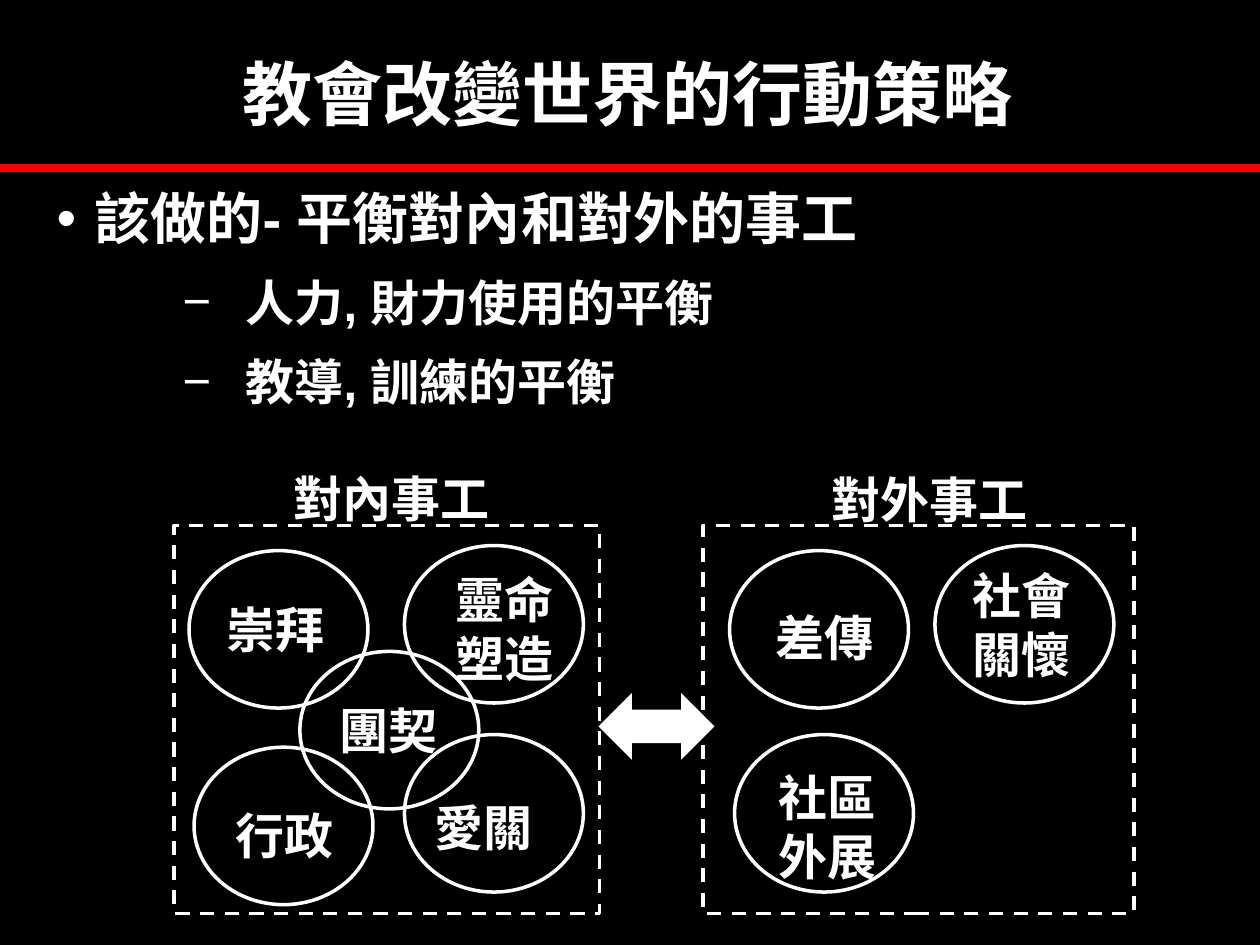
from dataclasses import dataclass

from lxml import etree
from pptx import Presentation
from pptx.dml.color import RGBColor
from pptx.enum import dml, shapes, text
from pptx.oxml import ns
from pptx.util import Inches, Pt


@dataclass(frozen=True)
class Theme:
    font: str = "Arial"
    back: RGBColor = RGBColor(0, 0, 0)
    ink: RGBColor = RGBColor(255, 255, 255)
    rule: RGBColor = RGBColor(255, 0, 0)
    title: int = 40
    lead: int = 32
    label: int = 28
    outline: float = 2
    rule_width: float = 4.5


class SlideBuilder:
    def __init__(self, slide, theme):
        self.slide = slide
        self.theme = theme
        slide.background.fill.solid()
        slide.background.fill.fore_color.rgb = theme.back

    def place(self, shape, area):
        shape.left, shape.top, shape.width, shape.height = map(Inches, area)

    def add_words(self, para, words, size, align=text.PP_ALIGN.LEFT):
        para.alignment = align
        span = para.add_run()
        span.text = words
        span.font.name = self.theme.font
        span.font.size = Pt(size)
        span.font.bold = True
        span.font.color.rgb = self.theme.ink

    def title(self, words, area):
        holder = self.slide.shapes.title
        self.place(holder, area)
        holder.text_frame.auto_size = text.MSO_AUTO_SIZE.NONE
        self.add_words(holder.text_frame.paragraphs[0], words,
                       self.theme.title, text.PP_ALIGN.CENTER)

    def bullets(self, items, area):
        holder = self.slide.placeholders[1]
        self.place(holder, area)
        frame = holder.text_frame
        frame.auto_size = text.MSO_AUTO_SIZE.NONE
        for index, (level, words) in enumerate(items):
            para = frame.add_paragraph() if index else frame.paragraphs[0]
            para.level = level
            para.space_before = Pt(12 * level)
            size, margin, hang, mark = (
                (self.theme.label, 1.5, 0.5, "−") if level
                else (self.theme.lead, 0.3, 0.3, "•"))
            self.add_words(para, words, size)
            props = para._p.get_or_add_pPr()
            props.set("marL", str(Inches(margin)))
            props.set("indent", str(-Inches(hang)))
            etree.SubElement(props, ns.qn("a:buChar")).set("char", mark)

    def rule(self, y):
        line = self.slide.shapes.add_connector(
            shapes.MSO_CONNECTOR.STRAIGHT, 0, Inches(y), Inches(10), Inches(y))
        line.line.color.rgb = self.theme.rule
        line.line.width = Pt(self.theme.rule_width)
        etree.SubElement(line._element.spPr, ns.qn("a:effectLst"))

    def outline(self, kind, area, parent=None, dash=None):
        shape = (parent or self.slide).shapes.add_shape(kind, *map(Inches, area))
        shape.shadow.inherit = False
        shape.fill.background()
        shape.line.color.rgb = self.theme.ink
        shape.line.width = Pt(self.theme.outline)
        shape.line.dash_style = dash

    def label(self, lines, area, parent=None, wrap=True):
        box = (parent or self.slide).shapes.add_textbox(*map(Inches, area))
        frame = box.text_frame
        frame.word_wrap = wrap
        align = text.PP_ALIGN.CENTER if wrap else text.PP_ALIGN.LEFT
        for index, words in enumerate(lines):
            para = frame.add_paragraph() if index else frame.paragraphs[0]
            self.add_words(para, words, self.theme.label, align)

    def ministry(self, lines, circle, caption, grouped):
        parent = self.slide.shapes.add_group_shape() if grouped else None
        self.outline(shapes.MSO_SHAPE.OVAL, (*circle, 1.42, 1.25), parent)
        height = 0.57 if len(lines) == 1 else 1.04
        self.label(lines, (*caption, 1.67, height), parent)

    def panel(self, heading, heading_at, area):
        self.outline(shapes.MSO_SHAPE.RECTANGLE, area,
                     dash=dml.MSO_LINE.DASH)
        self.label([heading], (*heading_at, 1.77, 0.57), wrap=False)

    def double_arrow(self, area):
        arrow = self.slide.shapes.add_shape(
            shapes.MSO_SHAPE.LEFT_RIGHT_ARROW, *map(Inches, area))
        arrow.shadow.inherit = False
        arrow.fill.solid()
        arrow.fill.fore_color.rgb = self.theme.ink
        arrow.line.fill.background()


# Lines of the label, circle corner, label corner
INWARD = [
    (["團契"], (2.38, 5.17), (2.25, 5.51)),
    (["愛關"], (3.21, 5.83), (3, 6.28)),
    (["崇拜"], (1.5, 4.37), (1.35, 4.71)),
    (["靈命", "塑造"], (3.21, 4.33), (3.17, 4.47)),
    (["行政"], (1.54, 5.93), (1.42, 6.34)),
]
OUTWARD = [
    (["差傳"], (5.79, 4.37), (5.71, 4.77)),
    (["社會", "關懷"], (7.42, 4.33), (7.27, 4.44)),
    (["社區", "外展"], (5.83, 5.83), (5.73, 6.04)),
]


def main():
    deck = Presentation()
    deck.slide_width, deck.slide_height = Inches(10), Inches(7.5)
    page = SlideBuilder(deck.slides.add_slide(deck.slide_layouts[1]), Theme())

    # Heading and points
    page.rule(1.33)
    page.title("教會改變世界的行動策略", (-0.02, 0.35, 10, 0.77))
    page.bullets([(0, "該做的- 平衡對內和對外的事工"),
                  (1, "人力, 財力使用的平衡"),
                  (1, "教導, 訓練的平衡")], (0.35, 1.41, 9.17, 1.92))

    # Inward and outward ministries
    page.panel("對內事工", (2.23, 3.67), (1.38, 4.17, 3.38, 3.08))
    page.panel("對外事工", (6.5, 3.68), (5.58, 4.17, 3.42, 3.08))
    for ministries, grouped in ((INWARD, True), (OUTWARD, False)):
        for lines, circle, caption in ministries:
            page.ministry(lines, circle, caption, grouped)

    # Balance between the two
    page.double_arrow((4.75, 5.5, 0.92, 0.53))
    deck.save("out.pptx")


if __name__ == "__main__":
    main()
